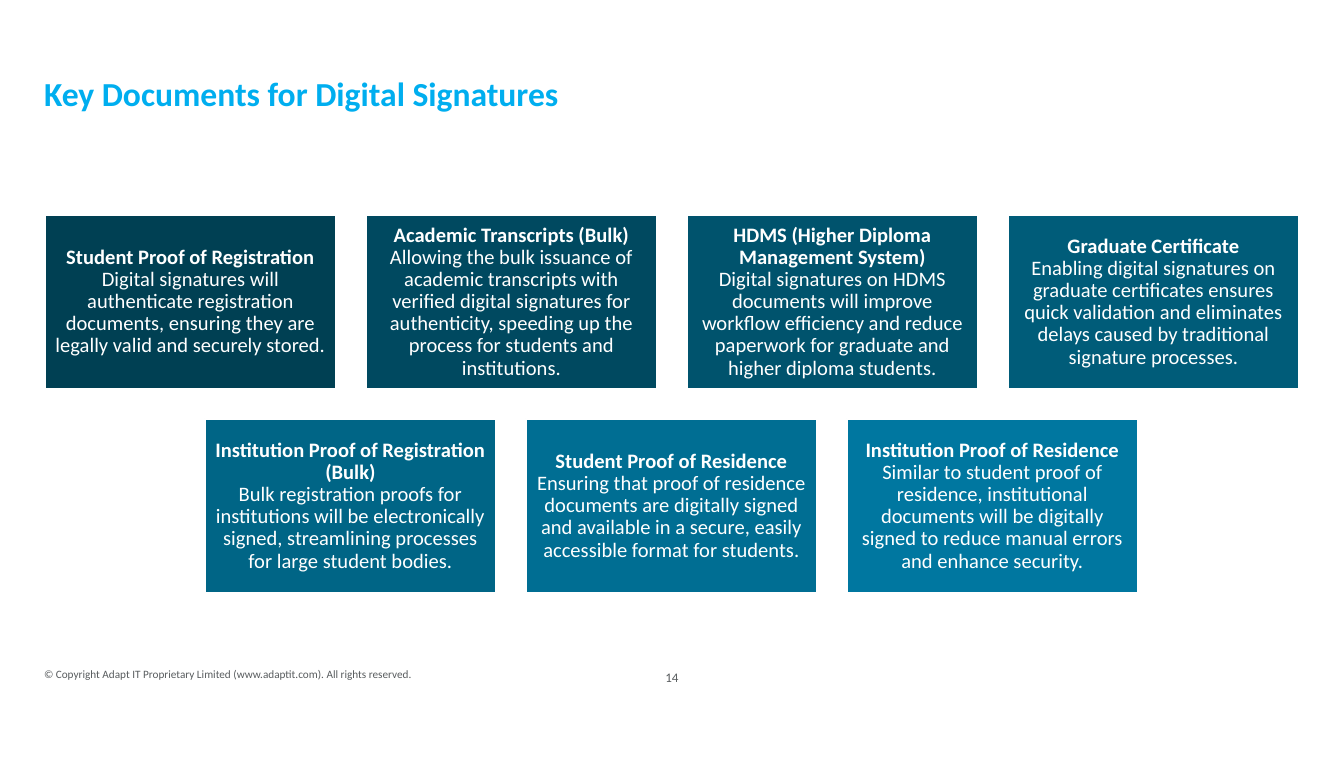
from dataclasses import dataclass

from pptx import Presentation
from pptx.dml.color import RGBColor as Color
from pptx.enum.shapes import MSO_SHAPE as Shape
from pptx.enum.text import MSO_ANCHOR as Anchor, PP_ALIGN as Align
from pptx.util import Emu, Pt

PAGE_WIDTH, PAGE_HEIGHT = 1344, 757
CARD_WIDTH, CARD_HEIGHT, GAP = 291, 174, 30
CARDS_TOP = 215

CARD_ROWS = [
    [
        ("Student Proof of Registration",
         "Digital signatures will authenticate registration documents, "
         "ensuring they are legally valid and securely stored."),
        ("Academic Transcripts (Bulk)",
         "Allowing the bulk issuance of academic transcripts with verified "
         "digital signatures for authenticity, speeding up the process for "
         "students and institutions."),
        ("HDMS (Higher Diploma Management System)",
         "Digital signatures on HDMS documents will improve workflow "
         "efficiency and reduce paperwork for graduate and higher diploma "
         "students."),
        ("Graduate Certificate",
         "Enabling digital signatures on graduate certificates ensures quick "
         "validation and eliminates delays caused by traditional signature "
         "processes."),
    ],
    [
        ("Institution Proof of Registration (Bulk)",
         "Bulk registration proofs for institutions will be electronically "
         "signed, streamlining processes for large student bodies."),
        ("Student Proof of Residence",
         "Ensuring that proof of residence documents are digitally signed and "
         "available in a secure, easily accessible format for students."),
        ("Institution Proof of Residence",
         "Similar to student proof of residence, institutional documents will "
         "be digitally signed to reduce manual errors and enhance security."),
    ],
]


def px(length):
    return Emu(round(length * 914400 / 134.4))


@dataclass(frozen=True)
class Theme:
    font: str = "Calibri"
    title: str = "00AEEF"
    footer: str = "585C5E"
    light: str = "FFFFFF"
    cards: tuple = ("004053", "004960", "00536D", "005C79",
                    "006586", "006E93", "0077A0")
    title_size: int = 18
    card_size: int = 11
    copyright_size: int = 6
    number_size: int = 7


class SlideBuilder:
    def __init__(self, page, theme):
        self.page = page
        self.theme = theme

    def prepare_frame(self, box, inset):
        """Set wrapping, middle anchor and equal margins; return the first paragraph."""
        frame = box.text_frame
        formats = {"word_wrap": True, "vertical_anchor": Anchor.MIDDLE}
        for side in ("left", "top", "right", "bottom"):
            formats[f"margin_{side}"] = px(inset)
        for name, value in formats.items():
            setattr(frame, name, value)
        return frame.paragraphs[0]

    def span(self, para, text, size, color, bold=False):
        span = para.add_run()
        span.text = text
        formats = {"name": self.theme.font, "size": Pt(size), "bold": bold}
        for name, value in formats.items():
            setattr(span.font, name, value)
        span.font.color.rgb = Color.from_string(color)

    def text(self, text, area, size, color, bold=False, align=Align.LEFT, spacing=None):
        box = self.page.shapes.add_textbox(*map(px, area))
        para = self.prepare_frame(box, 0)
        para.alignment = align
        para.line_spacing = spacing
        self.span(para, text, size, color, bold)

    def card(self, heading, body, left, top, fill):
        theme = self.theme
        area = (left, top, CARD_WIDTH, CARD_HEIGHT)
        box = self.page.shapes.add_shape(Shape.RECTANGLE, *map(px, area))
        box.shadow.inherit = False
        box.fill.solid()
        box.fill.fore_color.rgb = Color.from_string(fill)
        box.line.color.rgb = Color.from_string(theme.light)
        box.line.width = Pt(1)
        para = self.prepare_frame(box, 7)
        para.alignment = Align.CENTER
        para.line_spacing = 0.9
        self.span(para, heading, theme.card_size, theme.light, bold=True)
        para.add_line_break()
        self.span(para, body, theme.card_size, theme.light)

    def card_grid(self, rows):
        """Lay out each row centred on the page, with fills running on across rows."""
        fills = iter(self.theme.cards)
        for row_index, row in enumerate(rows):
            row_width = len(row) * (CARD_WIDTH + GAP) - GAP
            start = (PAGE_WIDTH - row_width) // 2
            top = CARDS_TOP + row_index * (CARD_HEIGHT + GAP)
            for column, (heading, body) in enumerate(row):
                left = start + column * (CARD_WIDTH + GAP)
                self.card(heading, body, left, top, next(fills))


def main():
    deck = Presentation()
    deck.slide_width, deck.slide_height = px(PAGE_WIDTH), px(PAGE_HEIGHT)
    theme = Theme()
    builder = SlideBuilder(deck.slides.add_slide(deck.slide_layouts[6]), theme)

    builder.text("© Copyright Adapt IT Proprietary Limited (www.adaptit.com). "
                 "All rights reserved.",
                 (44, 643, 464, 62), theme.copyright_size, theme.footer)
    builder.text("14", (579, 642, 186, 70), theme.number_size, theme.footer,
                 align=Align.CENTER)
    builder.text("Key Documents for Digital Signatures", (44, 57, 1254, 71),
                 theme.title_size, theme.title, bold=True, spacing=Pt(22.6))
    builder.card_grid(CARD_ROWS)

    deck.save("out.pptx")


if __name__ == "__main__":
    main()
